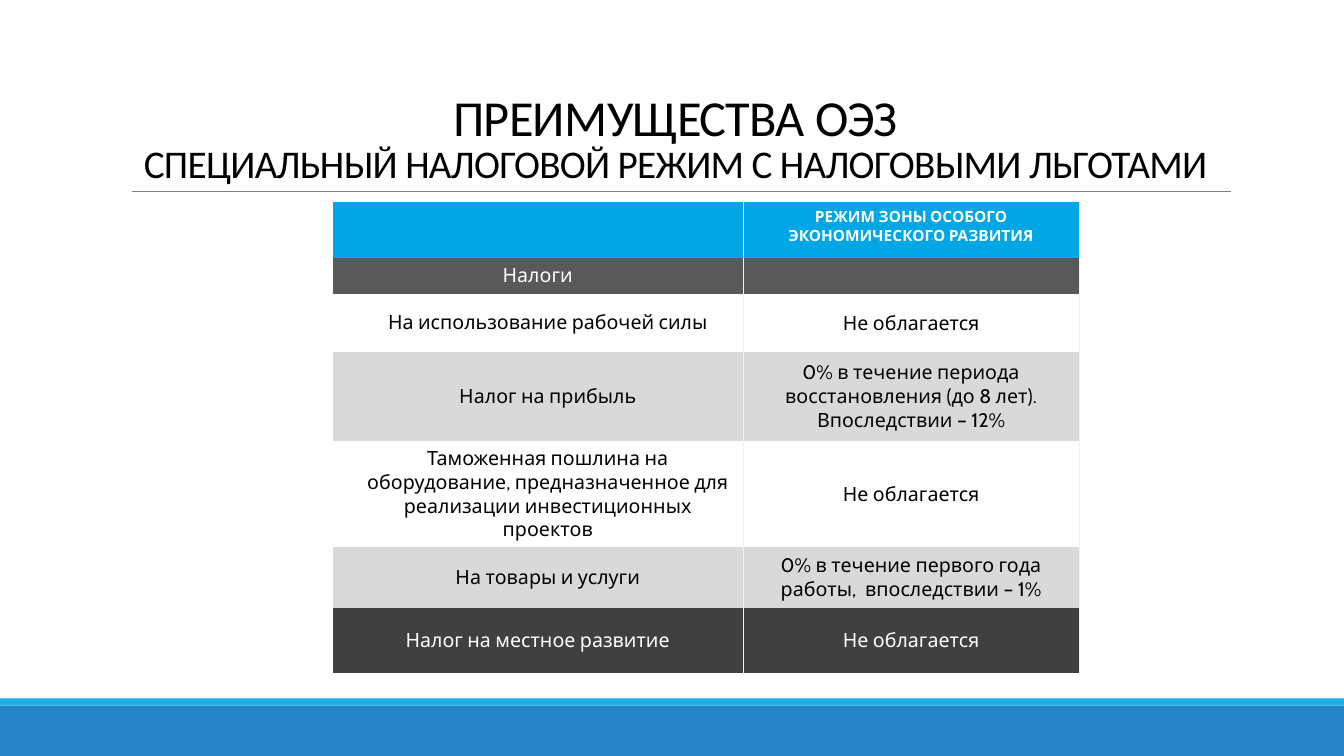
from dataclasses import dataclass

from lxml.etree import SubElement
from pptx import Presentation
from pptx.dml.color import RGBColor as Rgb
from pptx.enum.shapes import MSO_CONNECTOR as Link, MSO_SHAPE as Kind
from pptx.enum.text import MSO_ANCHOR as Anchor, MSO_AUTO_SIZE as Fit, PP_ALIGN as Align
from pptx.oxml import parse_xml
from pptx.oxml.ns import nsdecls, qn
from pptx.util import Cm, Pt


@dataclass
class Theme:
    blue: str = "2683C6"
    cyan: str = "1CADE4"
    head: str = "00A6E5"
    gray: str = "595959"
    dark: str = "404040"
    pale: str = "D9D9D9"
    white: str = "FFFFFF"
    black: str = "000000"
    rule: str = "808080"
    edge: str = "F2F2F2"
    title: int = 36
    sub: int = 28
    body: int = 14
    small: int = 11


look = Theme()


def write(para, text, font="Cabin", size=look.body, color=look.black,
          bold=False, after=6, line=None, track=None, indent=0):
    para.alignment = Align.CENTER
    para.space_after = Pt(after)
    if line:
        para.line_spacing = line
    if indent:
        para.level = 1
        para._p.get_or_add_pPr().set("marL", str(Cm(indent)))
        para._p.get_or_add_pPr().set("indent", "0")
    run = para.add_run()
    run.text = text
    run.font.name = font
    run.font.size = Pt(size)
    run.font.bold = bold
    run.font.color.rgb = Rgb.from_string(color)
    if track:
        run.font._element.set("spc", str(track))


def border(cell, sides):
    props = cell._tc.get_or_add_tcPr()
    for spot, side in enumerate("LRTB"):
        paint = "<a:noFill/>"
        if side in sides:
            paint = f'<a:solidFill><a:srgbClr val="{look.edge}"/></a:solidFill>'
        props.insert(spot, parse_xml(
            f'<a:ln{side} {nsdecls("a")} w="{Pt(0.5)}">{paint}</a:ln{side}>'))


deck = Presentation()
deck.slide_width, deck.slide_height = Cm(33.87), Cm(19.05)
slide = deck.slides.add_slide(deck.slide_layouts[5])
shapes = slide.shapes

# Bottom bars
for top, high, color in ((17.78, 1.27, look.blue), (17.6, 0.18, look.cyan)):
    bar = shapes.add_shape(Kind.RECTANGLE, 0, Cm(top), deck.slide_width, Cm(high))
    bar.shadow.inherit = False
    bar.fill.solid()
    bar.fill.fore_color.rgb = Rgb.from_string(color)
    bar.line.fill.background()

# Rule under the title
rule = shapes.add_connector(Link.STRAIGHT, Cm(3.33), Cm(4.83), Cm(31.01), Cm(4.83))
rule.line.color.rgb = Rgb.from_string(look.rule)
rule.line.width = Pt(0.5)
SubElement(rule._element.spPr, qn("a:effectLst"))

# Title
title = shapes.title
title.left, title.top, title.width, title.height = Cm(3.05), Cm(0.79), Cm(27.94), Cm(4.04)
frame = title.text_frame
frame.word_wrap = True
frame.auto_size = Fit.NONE
frame.vertical_anchor = Anchor.BOTTOM
para = frame.paragraphs[0]
form = dict(font="Calibri", after=0, line=0.85, track=-50)
write(para, "ПРЕИМУЩЕСТВА ОЭЗ", size=look.title, **form)
para.add_line_break()
write(para, "СПЕЦИАЛЬНЫЙ НАЛОГОВОЙ РЕЖИМ С НАЛОГОВЫМИ ЛЬГОТАМИ", size=look.sub, **form)

# Tax table: height, fill, tax, rate
free = "Не облагается"
rows = (
    (1.4, look.head, "", "РЕЖИМ ЗОНЫ ОСОБОГО ЭКОНОМИЧЕСКОГО РАЗВИТИЯ"),
    (0.91, look.gray, "Налоги", ""),
    (1.45, look.white, "На использование рабочей силы", free),
    (2.26, look.pale, "Налог на прибыль",
     "0% в течение периода восстановления (до 8 лет). Впоследствии – 12%"),
    (2.65, look.white, "Таможенная пошлина на оборудование, предназначенное "
     "для реализации инвестиционных проектов", free),
    (1.54, look.pale, "На товары и услуги",
     "0% в течение первого года работы,  впоследствии – 1%"),
    (1.63, look.dark, "Налог на местное развитие", free),
)
wide = (10.34, 8.48)
high = sum(row[0] for row in rows)
table = shapes.add_table(len(rows), len(wide), Cm(8.38), Cm(5.1),
                         Cm(sum(wide)), Cm(high)).table
table.first_row = table.horz_banding = False
for col, width in zip(table.columns, wide):
    col.width = Cm(width)

for r, (tall, fill, *texts) in enumerate(rows):
    table.rows[r].height = Cm(tall)
    light = fill in (look.white, look.pale)
    for c, text in enumerate(texts):
        cell = table.cell(r, c)
        cell.fill.solid()
        cell.fill.fore_color.rgb = Rgb.from_string(fill)
        border(cell, "LR" if c else "R")
        cell.vertical_anchor = Anchor.TOP if r < 2 else Anchor.MIDDLE
        cell.margin_left = cell.margin_right = Cm(0.25)
        cell.margin_top = cell.margin_bottom = Cm(0.13)
        para = cell.text_frame.paragraphs[0]
        if text:
            write(para, text, size=look.body if r else look.small, bold=r == 0,
                  color=look.black if light else look.white,
                  indent=0.51 if light and c == 0 else 0)
        else:
            para.font.size = Pt(look.body)

# The first rate sits in a cell with almost no margins
cell = table.cell(2, 1)
cell.margin_left = cell.margin_right = cell.margin_top = Cm(0.03)
cell.margin_bottom = 0

deck.save("out.pptx")
